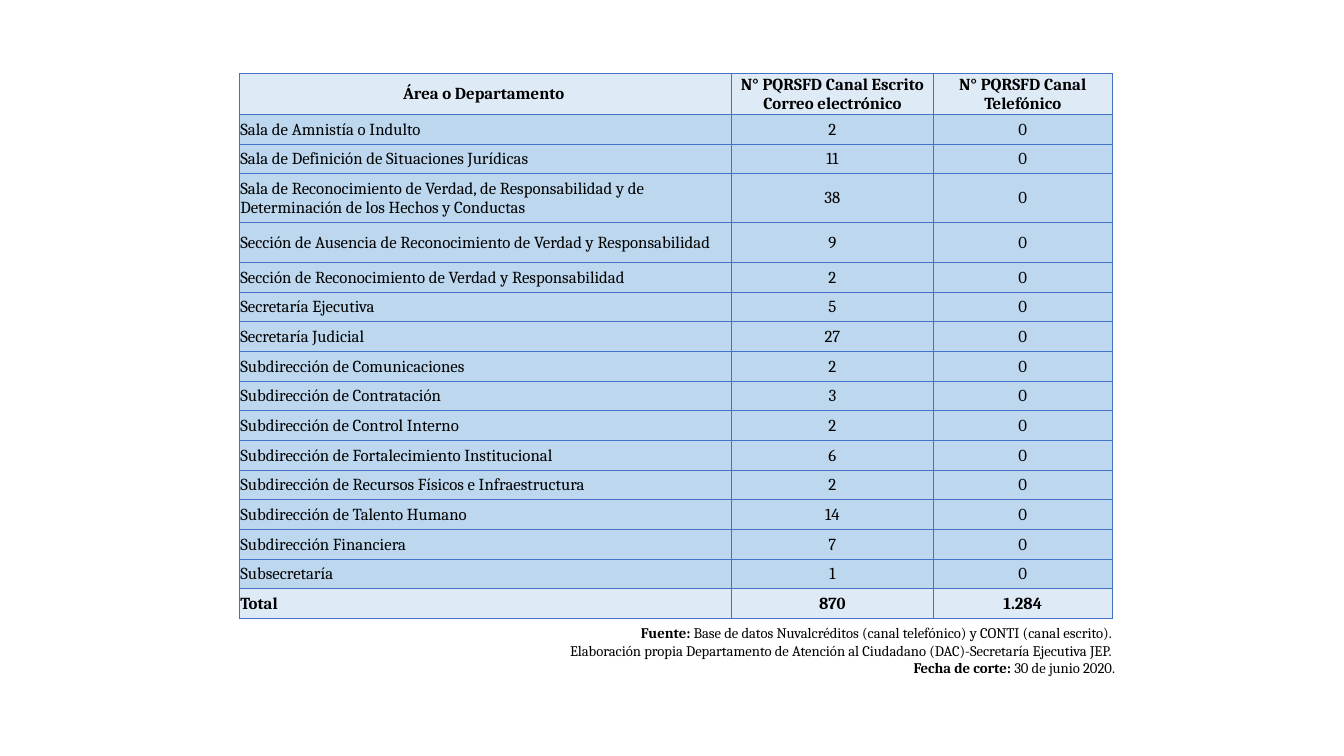
from dataclasses import dataclass

from lxml import etree
from pptx import Presentation
from pptx import util as u
from pptx.dml import color
from pptx.enum import text
from pptx.oxml import ns

BLACK = color.RGBColor(0x00, 0x00, 0x00)
PALE_BLUE = color.RGBColor(0xDE, 0xEB, 0xF7)
LIGHT_BLUE = color.RGBColor(0xBD, 0xD7, 0xEE)
BORDER_BLUE = color.RGBColor(0x44, 0x72, 0xC4)

FONT = "Cambria"
COLUMN_WIDTHS = (351.5, 144, 128)
ROW_HEIGHT = 21.2
CELL_FORMAT = {
    "vertical_anchor": text.MSO_ANCHOR.MIDDLE,
    "margin_left": u.Pt(0.6),
    "margin_right": u.Pt(0.6),
    "margin_top": u.Pt(0.6),
    "margin_bottom": u.Pt(0),
}


@dataclass(frozen=True)
class AreaRow:
    area: str
    written: str
    phone: str = "0"
    height: float = ROW_HEIGHT
    heading: bool = False
    total: bool = False


@dataclass(frozen=True)
class SourceLine:
    label: str
    detail: str


AREA_ROWS = (
    AreaRow("Área o Departamento ", "N° PQRSFD Canal Escrito Correo electrónico",
            "N° PQRSFD Canal Telefónico", height=29.4, heading=True),
    AreaRow("Sala de Amnistía o Indulto", "2"),
    AreaRow("Sala de Definición de Situaciones Jurídicas", "11"),
    AreaRow("Sala de Reconocimiento de Verdad, de Responsabilidad y de "
            "Determinación de los Hechos y Conductas", "38", height=34.8),
    AreaRow("Sección de Ausencia de Reconocimiento de Verdad y Responsabilidad",
            "9", height=28.7),
    AreaRow("Sección de Reconocimiento de Verdad y Responsabilidad", "2"),
    AreaRow("Secretaría Ejecutiva", "5"),
    AreaRow("Secretaría Judicial", "27"),
    AreaRow("Subdirección de Comunicaciones", "2"),
    AreaRow("Subdirección de Contratación", "3"),
    AreaRow("Subdirección de Control Interno", "2"),
    AreaRow("Subdirección de Fortalecimiento Institucional", "6"),
    AreaRow("Subdirección de Recursos Físicos e Infraestructura", "2"),
    AreaRow("Subdirección de Talento Humano", "14"),
    AreaRow("Subdirección Financiera", "7"),
    AreaRow("Subsecretaría", "1"),
    AreaRow("Total", "870", "1.284", total=True),
)

SOURCE_LINES = (
    SourceLine("Fuente:", " Base de datos Nuvalcréditos (canal telefónico) y CONTI (canal escrito). "),
    SourceLine("", "Elaboración propia Departamento de Atención al Ciudadano "
                   "(DAC)-Secretaría Ejecutiva JEP. "),
    SourceLine("Fecha de corte:", " 30 de junio 2020."),
)


def apply_format(target: object, values: dict) -> None:
    for name, value in values.items():
        setattr(target, name, value)


def add_run(paragraph, content: str, size: float, bold: bool) -> None:
    run = paragraph.add_run()
    run.text = content
    apply_format(run.font, {"name": FONT, "size": u.Pt(size), "bold": bold})
    run.font.color.rgb = BLACK


def add_borders(cell) -> None:
    properties = cell._tc.get_or_add_tcPr()
    for position, side in enumerate(("lnL", "lnR", "lnT", "lnB")):
        line = etree.Element(ns.qn(f"a:{side}"), w=str(u.Pt(0.5)))
        fill = etree.SubElement(line, ns.qn("a:solidFill"))
        etree.SubElement(fill, ns.qn("a:srgbClr"), val=str(BORDER_BLUE))
        properties.insert(position, line)


def fill_cell(cell, content: str, centered: bool, bold: bool) -> None:
    apply_format(cell, CELL_FORMAT)
    cell.fill.solid()
    cell.fill.fore_color.rgb = PALE_BLUE if bold else LIGHT_BLUE
    add_borders(cell)
    paragraph = cell.text_frame.paragraphs[0]
    paragraph.alignment = text.PP_ALIGN.CENTER if centered else text.PP_ALIGN.LEFT
    add_run(paragraph, content, 12, bold)


def add_area_table(slide) -> None:
    height = sum(row.height for row in AREA_ROWS)
    table = slide.shapes.add_table(
        len(AREA_ROWS), len(COLUMN_WIDTHS), u.Pt(171.1), u.Pt(52.3),
        u.Pt(sum(COLUMN_WIDTHS)), u.Pt(height)).table
    apply_format(table, {"first_row": False, "horz_banding": False})
    for column, width in zip(table.columns, COLUMN_WIDTHS):
        column.width = u.Pt(width)
    for row_index, row in enumerate(AREA_ROWS):
        table.rows[row_index].height = u.Pt(row.height)
        for column_index, content in enumerate((row.area, row.written, row.phone)):
            fill_cell(table.cell(row_index, column_index), content,
                      centered=row.heading or column_index > 0,
                      bold=row.heading or row.total)


def add_source_note(slide) -> None:
    shape = slide.shapes.add_textbox(u.Pt(332.6), u.Pt(442.1), u.Pt(471), u.Pt(45.4))
    frame = shape.text_frame
    apply_format(frame, {"word_wrap": True, "auto_size": text.MSO_AUTO_SIZE.SHAPE_TO_FIT_TEXT})
    for index, line in enumerate(SOURCE_LINES):
        paragraph = frame.add_paragraph() if index else frame.paragraphs[0]
        paragraph.alignment = text.PP_ALIGN.RIGHT
        if line.label:
            add_run(paragraph, line.label, 10.5, True)
        add_run(paragraph, line.detail, 10.5, False)


def main() -> None:
    presentation = Presentation()
    apply_format(presentation, {"slide_width": u.Pt(960), "slide_height": u.Pt(540)})
    slide = presentation.slides.add_slide(presentation.slide_layouts[6])
    add_area_table(slide)
    add_source_note(slide)
    presentation.save("out.pptx")


if __name__ == "__main__":
    main()
